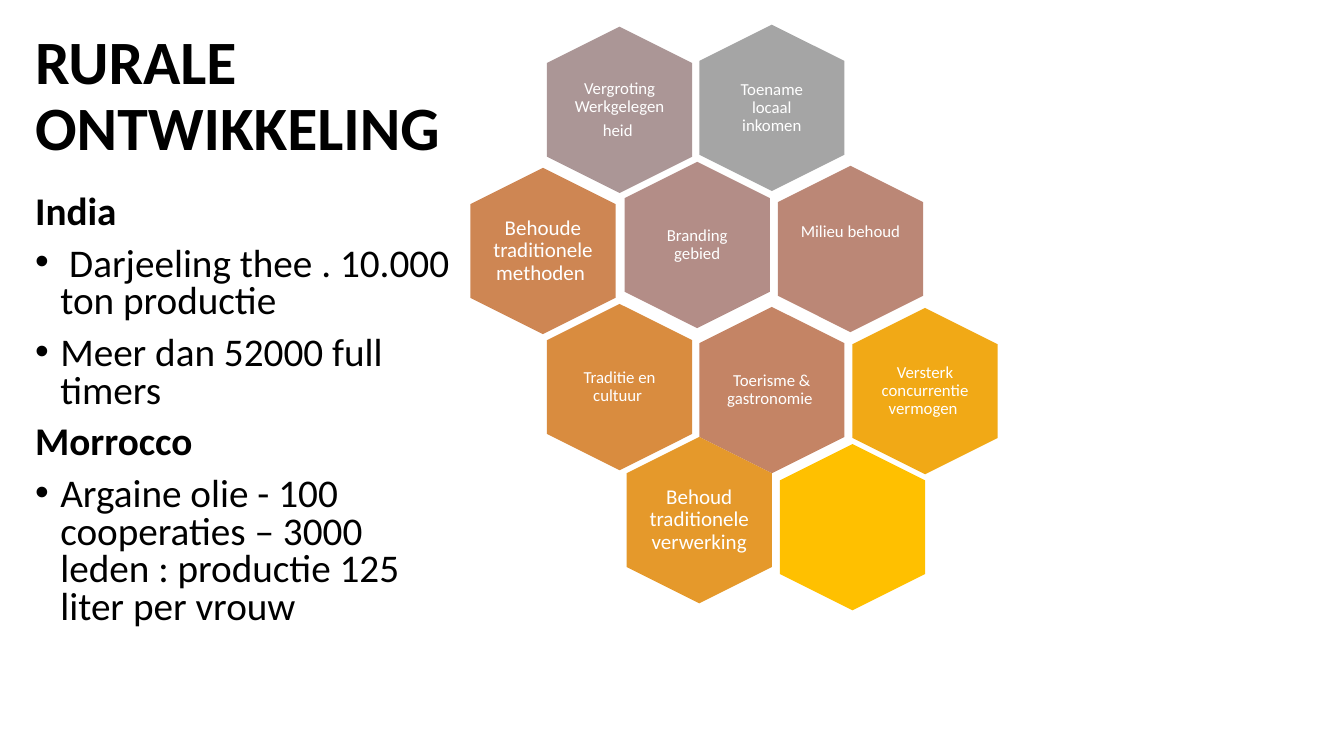
"""Builds the rural development slide with its honeycomb of themes."""
from lxml.etree import SubElement
from pptx import Presentation
from pptx.dml.color import RGBColor
from pptx.enum.shapes import MSO_SHAPE as Shape
from pptx.enum.text import MSO_ANCHOR as Anchor, PP_ALIGN as Align
from pptx.oxml.ns import qn
from pptx.util import Inches, Pt


def color(code):
    """Turn a hex string into a colour."""
    return RGBColor.from_string(code)


class SlideBuilder:
    """Holds the style and the current slide."""

    font = "Calibri"
    ink = "000000"
    light = "FFFFFF"
    hex_length, hex_breadth = 1.65, 1.44
    label_width, label_height = 0.99, 1.14

    def __init__(self, deck):
        """Add a blank slide with a honeycomb group to come."""
        self.slide = deck.slides.add_slide(deck.slide_layouts[6])
        self.comb = None

    def frame(self, shapes, left, top, width, height, anchor):
        """Add a wrapping text box and return its text frame."""
        box = shapes.add_textbox(*map(Inches, (left, top, width, height)))
        box.text_frame.word_wrap = True
        box.text_frame.vertical_anchor = anchor
        return box.text_frame

    def styled_run(self, paragraph, text, size, ink, bold=False):
        """Add one styled run."""
        run = paragraph.add_run()
        run.text = text
        run.font.name = self.font
        run.font.size = Pt(size)
        run.font.bold = bold
        run.font.color.rgb = color(ink)

    def paragraphs(self, frame, count):
        """Yield the given number of paragraphs of a frame."""
        for index in range(count):
            yield frame.add_paragraph() if index else frame.paragraphs[0]

    def title(self, text):
        """Add the slide heading."""
        heading = self.frame(self.slide.shapes, 0.25, 0.24, 4.53, 1.45, Anchor.MIDDLE).paragraphs[0]
        heading.line_spacing = 0.9
        self.styled_run(heading, text, 44, self.ink, True)

    def cell(self, left, top, fill, lines, size, inset, lift):
        """Add one honeycomb cell and its label."""
        if self.comb is None:
            self.comb = self.slide.shapes.add_group_shape().shapes
        cell = self.comb.add_shape(Shape.HEXAGON, Inches(left), Inches(top),
                                   Inches(self.hex_length), Inches(self.hex_breadth))
        cell.rotation = 90
        cell.adjustments[0] = 0.25
        cell.shadow.inherit = False
        cell.fill.solid()
        cell.fill.fore_color.rgb = color(fill)
        cell.line.fill.background()
        if not lines:
            return
        label = self.frame(self.comb, left + (self.hex_length - self.label_width) / 2,
                           top + (self.hex_breadth - self.label_height) / 2,
                           self.label_width, self.label_height, Anchor.MIDDLE)
        label.margin_left = label.margin_right = label.margin_top = Inches(inset)
        label.margin_bottom = Inches(inset + lift)
        for paragraph, line in zip(self.paragraphs(label, len(lines)), lines):
            paragraph.alignment = Align.CENTER
            paragraph.line_spacing = 0.9
            paragraph.space_after = Pt(4.2)
            self.styled_run(paragraph, line, size, self.light)

    def body(self, entries):
        """Add bold country names and their bulleted facts."""
        frame = self.frame(self.slide.shapes, 0.25, 1.89, 4.41, 4.76, Anchor.TOP)
        for index, (paragraph, (text, is_country)) in enumerate(
                zip(self.paragraphs(frame, len(entries)), entries)):
            paragraph.line_spacing = 0.8
            paragraph.space_before = Pt(10 if index else 0)
            if not is_country:
                properties = paragraph._p.get_or_add_pPr()
                properties.set("marL", str(Inches(0.25)))
                properties.set("indent", str(-Inches(0.25)))
                SubElement(properties, qn("a:buFont")).set("typeface", "Arial")
                SubElement(properties, qn("a:buChar")).set("char", "•")
            self.styled_run(paragraph, text, 28, self.ink, is_country)


THEMES = [
    (6.83, 0.35, "A5A5A5", ["Toename locaal inkomen"], 12, 0.05, 0),
    (5.32, 0.37, "AB9696", ["Vergroting Werkgelegen", "heid "], 12, 0, 0),
    (6.09, 1.71, "B38D87", ["Branding gebied"], 12, 0.05, 0),
    (7.61, 1.75, "BB8776", ["Milieu behoud"], 12, 0, 0.34),
    (6.83, 3.15, "C48465", ["Toerisme & gastronomie "], 12, 0.05, 0),
    (4.56, 1.77, "CE8653", ["Behoude traditionele methoden "], 15, 0, 0),
    (5.32, 3.12, "D98C3F", ["Traditie en cultuur "], 12, 0.05, 0),
    (6.11, 4.44, "E5992B", ["Behoud traditionele verwerking"], 15, 0, 0),
    (8.35, 3.16, "F1A916", ["Versterk concurrentie vermogen "], 12, 0.05, 0),
    (7.63, 4.51, "FFC000", [], 12, 0, 0),
]

FACTS = [
    ("India", True),
    (" Darjeeling thee . 10.000 ton productie", False),
    ("Meer dan 52000 full timers", False),
    ("Morrocco", True),
    ("Argaine olie - 100 cooperaties – 3000 leden : productie 125 liter per vrouw", False),
]


def main():
    """Build and save the deck."""
    deck = Presentation()
    deck.slide_width, deck.slide_height = Inches(13.33), Inches(7.5)
    builder = SlideBuilder(deck)
    builder.title("RURALE ONTWIKKELING")
    for theme in THEMES:
        builder.cell(*theme)
    builder.body(FACTS)
    deck.save("out.pptx")


if __name__ == "__main__":
    main()
